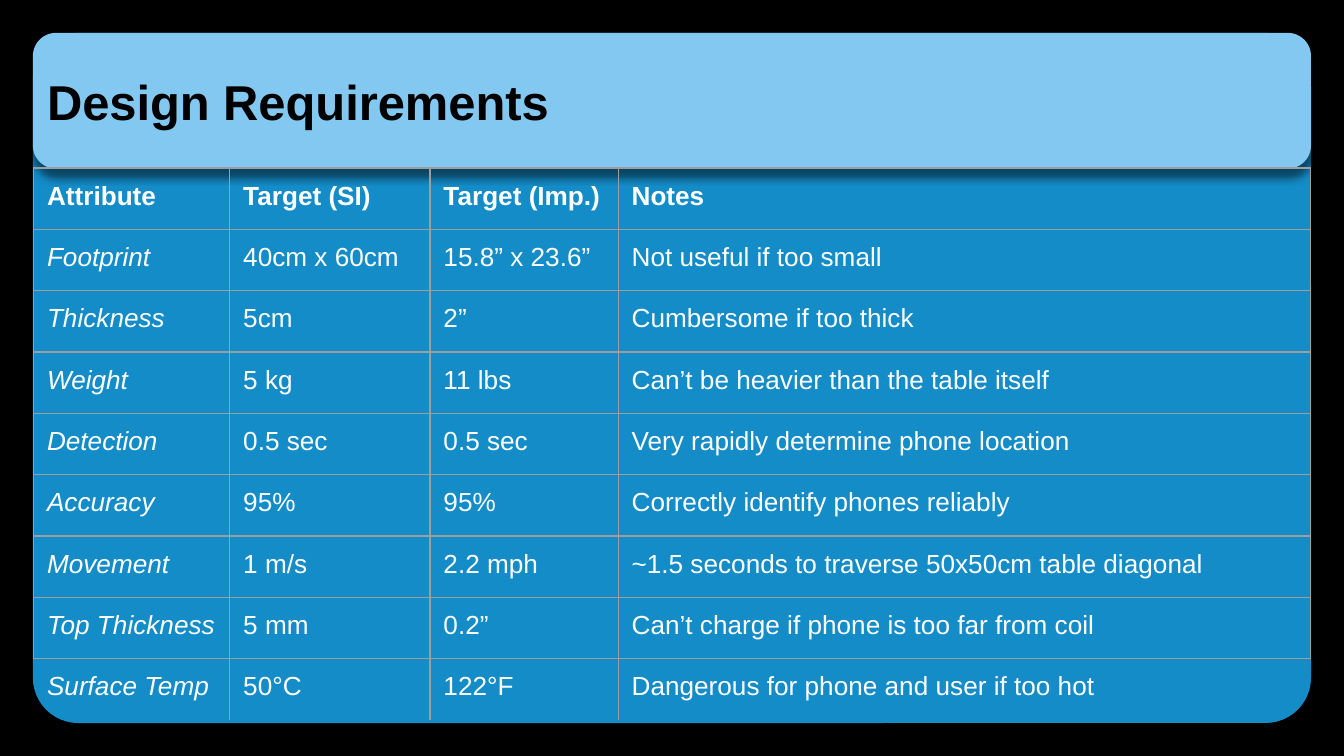
import dataclasses

import lxml.etree
import pptx
import pptx.dml.color
import pptx.enum.shapes
import pptx.enum.text
import pptx.oxml
import pptx.oxml.ns
import pptx.util

Inches = pptx.util.Inches


@dataclasses.dataclass(frozen=True)
class Theme:
    background: str = "000000"
    panel: str = "148CC8"
    header: str = "82C8F0"
    title: str = "000000"
    body: str = "FFFFFF"
    grid: str = "9E9E9E"
    font: str = "Arial"
    title_size: float = 26.2
    body_size: float = 14
    line_width: float = 0.75


theme = Theme()


def color(value):
    return pptx.dml.color.RGBColor.from_string(value)


def write_text(frame, text, *, size, fill, bold=False, italic=False):
    """Fill a text frame with one left-aligned, formatted run."""
    frame.word_wrap = True
    paragraph = frame.paragraphs[0]
    paragraph.alignment = pptx.enum.text.PP_ALIGN.LEFT
    run = paragraph.add_run()
    run.text = text
    run.font.name = theme.font
    run.font.size = pptx.util.Pt(size)
    run.font.bold = bold
    run.font.italic = italic
    run.font.color.rgb = color(fill)


# A 16:9 slide with an equal margin on all sides
slide_width = 10
slide_height = slide_width * 9 / 16
margin = 0.25
width = slide_width - 2 * margin
panel_height = slide_height - 2 * margin
header_height = 1

presentation = pptx.Presentation()
presentation.slide_width = Inches(slide_width)
presentation.slide_height = Inches(slide_height)
slide = presentation.slides.add_slide(presentation.slide_layouts[5])
slide.background.fill.solid()
slide.background.fill.fore_color.rgb = color(theme.background)

# Rounded panel behind the table, and the header band on top of it
for height, corner, fill in (
    (panel_height, 0.065, theme.panel),
    (header_height, 0.167, theme.header),
):
    band = slide.shapes.add_shape(
        pptx.enum.shapes.MSO_SHAPE.ROUNDED_RECTANGLE,
        Inches(margin), Inches(margin), Inches(width), Inches(height),
    )
    band.adjustments[0] = corner
    band.shadow.inherit = False
    band.fill.solid()
    band.fill.fore_color.rgb = color(fill)
    band.line.color.rgb = color(fill)
    band.line.width = pptx.util.Pt(theme.line_width)

# The header band, drawn last, casts a shadow on the panel
effects = band._element.spPr.find(pptx.oxml.ns.qn("a:effectLst"))
shadow_offset = pptx.util.Pt(4.5)
effects.append(pptx.oxml.parse_xml(
    f'<a:outerShdw {pptx.oxml.ns.nsdecls("a")} blurRad="{shadow_offset}" '
    f'dist="{shadow_offset}" dir="5400000" algn="bl" rotWithShape="0">'
    '<a:srgbClr val="000000"><a:alpha val="50000"/></a:srgbClr></a:outerShdw>'
))

title = slide.shapes.title
band._element.addnext(title._element)
title.left, title.top = Inches(margin), Inches(margin)
title.width, title.height = Inches(width), Inches(header_height)
frame = title.text_frame
frame.margin_left = frame.margin_right = Inches(0.1)
frame.margin_top = frame.margin_bottom = Inches(0.1)
frame.vertical_anchor = pptx.enum.text.MSO_ANCHOR.MIDDLE
frame.auto_size = pptx.enum.text.MSO_AUTO_SIZE.NONE
write_text(frame, "Design Requirements", size=theme.title_size, fill=theme.title, bold=True)

requirements = [
    ("Attribute", "Target (SI)", "Target (Imp.)", "Notes"),
    ("Footprint", "40cm x 60cm", "15.8” x 23.6”", "Not useful if too small"),
    ("Thickness", "5cm", "2”", "Cumbersome if too thick"),
    ("Weight", "5 kg", "11 lbs", "Can’t be heavier than the table itself"),
    ("Detection", "0.5 sec", "0.5 sec", "Very rapidly determine phone location"),
    ("Accuracy", "95%", "95%", "Correctly identify phones reliably"),
    ("Movement", "1 m/s", "2.2 mph", "~1.5 seconds to traverse 50x50cm table diagonal"),
    ("Top Thickness", "5 mm", "0.2”", "Can’t charge if phone is too far from coil"),
    ("Surface Temp", "50°C", "122°F", "Dangerous for phone and user if too hot"),
]
column_widths = [1.46, 1.49, 1.4, 5.15]
table_height = 4.11
row_height = table_height / len(requirements)
last_row, last_column = len(requirements) - 1, len(column_widths) - 1

table = slide.shapes.add_table(
    len(requirements), len(column_widths),
    Inches(margin), Inches(margin + header_height),
    Inches(width), Inches(table_height),
).table
table.first_row = False
table.horz_banding = False
for column, column_width in zip(table.columns, column_widths):
    column.width = Inches(column_width)

for row_index, row in enumerate(requirements):
    table.rows[row_index].height = Inches(row_height)
    for column_index, text in enumerate(row):
        cell = table.cell(row_index, column_index)
        cell.margin_left = cell.margin_right = Inches(0.1)
        cell.margin_top = cell.margin_bottom = Inches(0.1)
        write_text(
            cell.text_frame, text, size=theme.body_size, fill=theme.body,
            bold=row_index == 0, italic=row_index > 0 and column_index == 0,
        )
        # The last row has no outer border, so the panel's round corners show
        is_last = row_index == last_row
        borders = {
            "a:lnL": not (is_last and column_index == 0),
            "a:lnR": not (is_last and column_index == last_column),
            "a:lnT": True,
            "a:lnB": not is_last,
        }
        properties = cell._tc.get_or_add_tcPr()
        for tag, visible in borders.items():
            line = lxml.etree.SubElement(
                properties, pptx.oxml.ns.qn(tag), w=str(pptx.util.Pt(theme.line_width))
            )
            paint = lxml.etree.SubElement(
                line, pptx.oxml.ns.qn("a:solidFill" if visible else "a:noFill")
            )
            if visible:
                lxml.etree.SubElement(paint, pptx.oxml.ns.qn("a:srgbClr"), val=theme.grid)
        cell.fill.background()

presentation.save("out.pptx")
